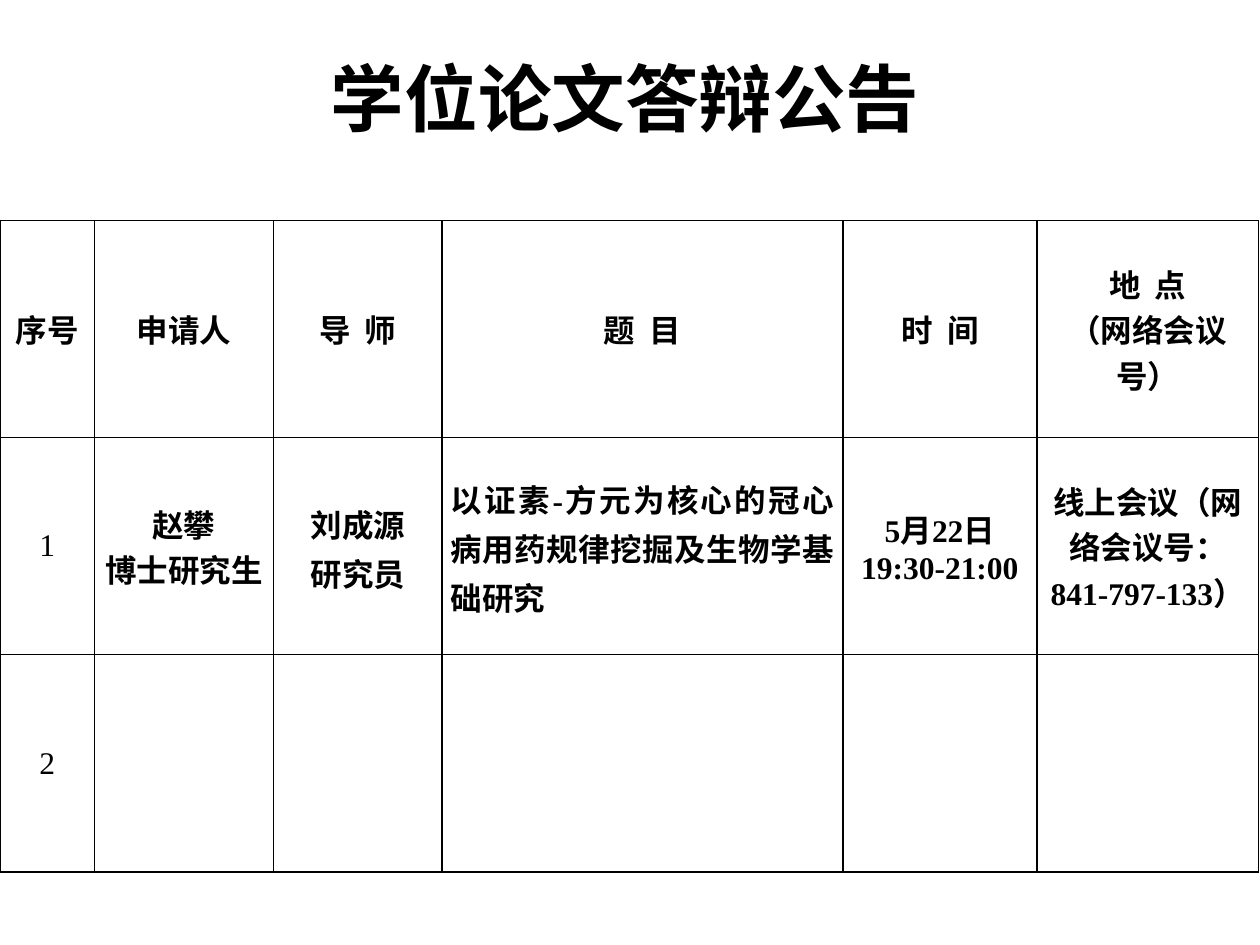
from lxml import etree
from pptx import Presentation
from pptx.dml.color import RGBColor
from pptx.enum.text import MSO_ANCHOR, PP_ALIGN
from pptx.oxml.ns import qn
from pptx.util import Inches, Pt

CENTER, JUSTIFY = PP_ALIGN.CENTER, PP_ALIGN.JUSTIFY
TOP, MIDDLE = MSO_ANCHOR.TOP, MSO_ANCHOR.MIDDLE
FONT = "Times New Roman"
BLACK = "000000"
BLANK_LAYOUT = 6

COLUMN_WIDTHS = [0.75, 1.42, 1.34, 3.18, 1.54, 1.76]
ROWS = [
    ["序号", "申请人", "导  师", "题  目", "时  间", "地  点\n（网络会议号）"],
    ["1", "赵攀\n博士研究生", "刘成源\n研究员",
     "以证素-方元为核心的冠心病用药规律挖掘及生物学基础研究",
     "5月22日\n19:30-21:00", "线上会议（网络会议号：841-797-133）"],
    ["2", "", "", "", "", ""],
]
ADVISOR, TOPIC = 2, 3


def color(value):
    return RGBColor.from_string(value)


def format_text(frame, size, bold=True, align=CENTER, line_spacing=None):
    for para in frame.paragraphs:
        para.alignment = align
        if line_spacing:
            para.line_spacing = line_spacing
        for span in para.runs:
            span.font.name = FONT
            span.font.size = Pt(size)
            span.font.bold = bold
            span.font.color.rgb = color(BLACK)


def add_borders(cell, width=Pt(1)):
    properties = cell._tc.get_or_add_tcPr()
    for side in ("a:lnL", "a:lnR", "a:lnT", "a:lnB"):
        line = etree.SubElement(properties, qn(side), w=str(width))
        fill = etree.SubElement(line, qn("a:solidFill"))
        etree.SubElement(fill, qn("a:srgbClr"), val=BLACK)


def add_title(page, left, top, width, height):
    box = page.shapes.add_textbox(left, top, width, height)
    frame = box.text_frame
    frame.word_wrap = True
    frame.vertical_anchor = TOP
    frame.text = "学位论文答辩公告"
    format_text(frame, 42)


def fill_cell(cell, text, row, column):
    add_borders(cell)
    cell.fill.background()
    cell.vertical_anchor = MIDDLE
    is_detail = row == 1 and column > 0
    if is_detail:
        cell.margin_left = cell.margin_right = Inches(0.07)
        cell.margin_top = cell.margin_bottom = 0
    cell.text_frame.text = text
    format_text(
        cell.text_frame, 18,
        bold=row == 0 or column > 0,
        align=JUSTIFY if is_detail and column == TOPIC else CENTER,
        line_spacing=Pt(28) if is_detail and column in (ADVISOR, TOPIC) else None,
    )


def add_schedule(page, left, top, width, height):
    frame = page.shapes.add_table(
        len(ROWS), len(COLUMN_WIDTHS), left, top, width, height)
    table = frame.table
    table.first_row = table.horz_banding = False
    for column, column_width in zip(table.columns, COLUMN_WIDTHS):
        column.width = Inches(column_width)
    for row, texts in enumerate(ROWS):
        for column, text in enumerate(texts):
            fill_cell(table.cell(row, column), text, row, column)


def main():
    deck = Presentation()
    deck.slide_width, deck.slide_height = Inches(10), Inches(7.5)
    page = deck.slides.add_slide(deck.slide_layouts[BLANK_LAYOUT])
    add_title(page, Inches(2.17), Inches(0.37), Inches(5.58), Inches(1.2))
    add_schedule(page, 0, Inches(1.75), Inches(sum(COLUMN_WIDTHS)), Inches(5.17))
    deck.save("out.pptx")


if __name__ == "__main__":
    main()
